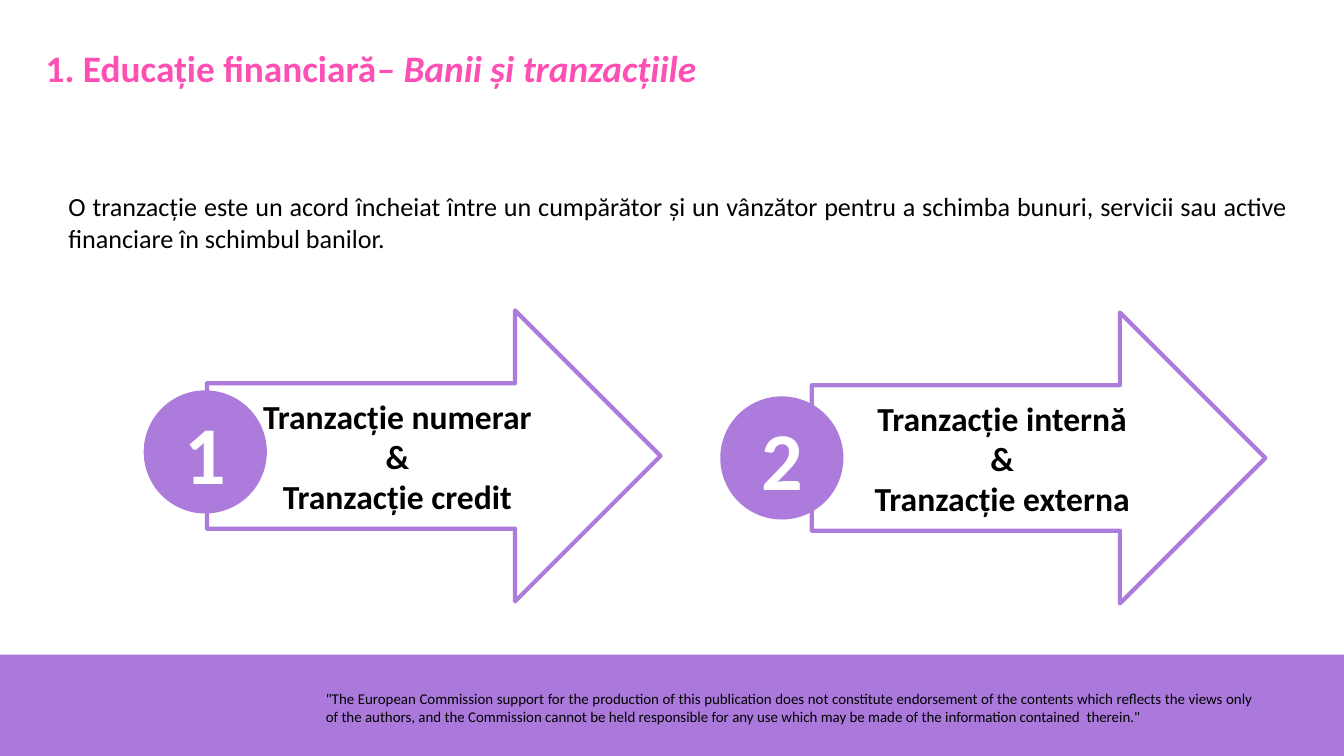
import pptx
import pptx.util
from pptx.dml.color import RGBColor
from pptx.enum.shapes import MSO_SHAPE
from pptx.enum.text import MSO_ANCHOR, MSO_AUTO_SIZE, PP_ALIGN

PINK = RGBColor(0xFD, 0x4F, 0xB4)
PURPLE = RGBColor(0xAC, 0x7B, 0xDC)
BAND = RGBColor(0xAB, 0x79, 0xDB)
BLACK = RGBColor(0, 0, 0)
WHITE = RGBColor(0xFF, 0xFF, 0xFF)

WIDTH, HEIGHT = 20, 11.25
BAND_TOP = 9.74
ARROW_SIZE = (6.75, 4.33)
CIRCLE = 1.77

INTRO = ("O tranzacție este un acord încheiat între un cumpărător și un vânzător "
         "pentru a schimba bunuri, servicii sau active financiare în schimbul banilor.")
DISCLAIMER = ('"The European Commission support for the production of this publication '
              "does not constitute endorsement of the contents which reflects the views "
              "only of the authors, and the Commission cannot be held responsible for any "
              'use which may be made of the information contained  therein."')
STEPS = [
    ("1", (3.08, 4.62), (2.17, 5.84), ["Tranzacție numerar", "&", "Tranzacție credit"]),
    ("2", (12.08, 4.65), (10.75, 5.93), ["Tranzacție internă", "&", "Tranzacție externa"]),
]


def inches(*lengths):
    return [pptx.util.Inches(x) for x in lengths]


def add_run(p, text, size, color, bold=False, italic=False):
    r = p.add_run()
    r.text = text
    r.font.name = "Calibri"
    r.font.size = pptx.util.Pt(size)
    r.font.color.rgb = color
    r.font.bold = bold
    r.font.italic = italic


def add_title(s):
    sp = s.shapes.title
    sp.left, sp.top, sp.width, sp.height = inches(0.58, 0.62, 13.67, 0.77)
    tf = sp.text_frame
    tf.auto_size = MSO_AUTO_SIZE.NONE
    tf.vertical_anchor = MSO_ANCHOR.TOP
    p = tf.paragraphs[0]
    p.alignment = PP_ALIGN.LEFT
    add_run(p, "1. Educație financiară", 40, PINK, bold=True)
    add_run(p, "– Banii și tranzacțiile", 40, PINK, bold=True, italic=True)


def add_text(s, box, text, size, spacing=1.0):
    tf = s.shapes.add_textbox(*inches(*box)).text_frame
    tf.word_wrap = True
    p = tf.paragraphs[0]
    p.alignment = PP_ALIGN.JUSTIFY
    p.line_spacing = spacing
    add_run(p, text, size, BLACK)


def add_figure(s, kind, box, fill=None, line=None, lines=(), size=36, color=BLACK):
    sp = s.shapes.add_shape(kind, *inches(*box))
    sp.shadow.inherit = False
    if fill is None:
        sp.fill.background()
    else:
        sp.fill.solid()
        sp.fill.fore_color.rgb = fill
    if line is None:
        sp.line.fill.background()
    else:
        sp.line.color.rgb = line
        sp.line.width = pptx.util.Pt(4.5)
    tf = sp.text_frame
    tf.vertical_anchor = MSO_ANCHOR.MIDDLE
    for i, text in enumerate(lines):
        p = tf.add_paragraph() if i else tf.paragraphs[0]
        p.alignment = PP_ALIGN.CENTER
        add_run(p, text, size, color, bold=True)


def add_step(s, number, arrow_at, circle_at, lines):
    add_figure(s, MSO_SHAPE.RIGHT_ARROW, (*arrow_at, *ARROW_SIZE), line=PURPLE, lines=lines)
    add_figure(s, MSO_SHAPE.OVAL, (*circle_at, CIRCLE, CIRCLE), PURPLE, PURPLE,
               [number], 88, WHITE)


def main():
    prs = pptx.Presentation()
    prs.slide_width, prs.slide_height = inches(WIDTH, HEIGHT)
    s = prs.slides.add_slide(prs.slide_layouts[5])
    add_figure(s, MSO_SHAPE.RECTANGLE, (0, BAND_TOP, WIDTH, HEIGHT - BAND_TOP), BAND)
    add_text(s, (4.75, 10.21, 14, 0.55), DISCLAIMER, 16, 1.01)
    add_title(s)
    add_text(s, (0.92, 2.79, 18.33, 1.04), INTRO, 28)
    for step in STEPS:
        add_step(s, *step)
    prs.save("out.pptx")


if __name__ == "__main__":
    main()
